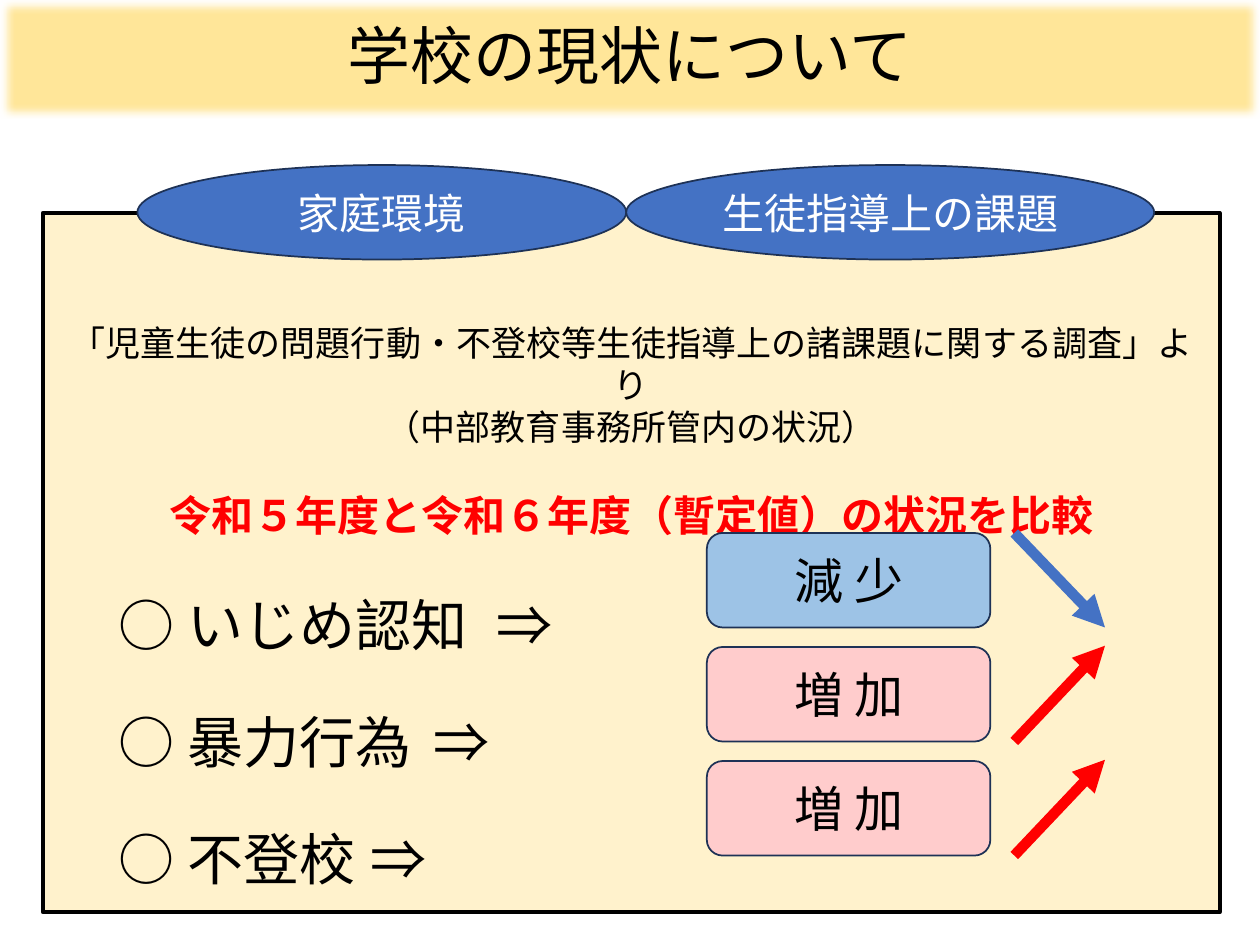
from lxml import etree
from pptx import Presentation
from pptx.dml.color import RGBColor
from pptx.enum.shapes import MSO_CONNECTOR, MSO_SHAPE
from pptx.enum.text import MSO_ANCHOR, MSO_AUTO_SIZE, PP_ALIGN
from pptx.oxml.ns import qn
from pptx.util import Inches, Pt

OVAL, ROUND = MSO_SHAPE.OVAL, MSO_SHAPE.ROUNDED_RECTANGLE
LEFT, CENTER = PP_ALIGN.LEFT, PP_ALIGN.CENTER
TOP, MIDDLE = MSO_ANCHOR.TOP, MSO_ANCHOR.MIDDLE
FONT = "Noto Sans CJK JP"
COLORS = {
    "black": "000000", "white": "FFFFFF", "red": "FF0000", "blue": "4472C4",
    "navy": "1E3256", "gold": "FFE699", "cream": "FFF2CC",
    "sky": "9DC3E6", "pink": "FFCCCC",
}

# Content
TITLE = "学校の現状について"
TOPICS = [("家庭環境", 1.09, 3.88), ("生徒指導上の課題", 4.97, 4.19)]
SOURCE = ["「児童生徒の問題行動・不登校等生徒指導上の諸課題に関する調査」より",
          "（中部教育事務所管内の状況）"]
HEAD = "令和５年度と令和６年度（暫定値）の状況を比較"
ITEMS = ["いじめ認知", "暴力行為", "不登校"]
TRENDS = [("減 少", "sky", "blue", False),
          ("増 加", "pink", "red", True),
          ("増 加", "pink", "red", True)]
TABS = [0.89, 4.1]


def rgb(name):
    return RGBColor.from_string(COLORS[name])


def add_text(para, text, size=24, color="black", bold=False, align=CENTER,
             lead=None, before=0):
    para.alignment = align
    para.space_before = Pt(before)
    if lead:
        para.line_spacing = lead
    run = para.add_run()
    run.text = text
    font = run.font
    font.size, font.bold, font.name = Pt(size), bold, FONT
    font.color.rgb = rgb(color)
    etree.SubElement(font._element, qn("a:ea"), typeface=FONT)


def paint(shape, fill, line=None, width=1):
    shape.shadow.inherit = False
    shape.fill.solid()
    shape.fill.fore_color.rgb = rgb(fill)
    if line:
        shape.line.color.rgb = rgb(line)
        shape.line.width = Pt(width)
    else:
        shape.line.fill.background()


def place(shape, x, y, w, h, anchor):
    shape.left, shape.top = Inches(x), Inches(y)
    shape.width, shape.height = Inches(w), Inches(h)
    frame = shape.text_frame
    frame.word_wrap = True
    frame.auto_size = MSO_AUTO_SIZE.NONE
    frame.vertical_anchor = anchor
    return frame


def add_box(kind, x, y, w, h, text, fill, **style):
    box = slide.shapes.add_shape(kind, 0, 0, 0, 0)
    frame = place(box, x, y, w, h, MIDDLE)
    paint(box, fill, "navy")
    add_text(frame.paragraphs[0], text, **style)


def add_arrow(x1, y1, x2, y2, color):
    arrow = slide.shapes.add_connector(
        MSO_CONNECTOR.STRAIGHT, Inches(x1), Inches(y1), Inches(x2), Inches(y2))
    arrow.line.color.rgb = rgb(color)
    arrow.line.width = Pt(6)
    props = arrow._element.spPr
    etree.SubElement(props.find(qn("a:ln")), qn("a:tailEnd"), type="triangle")
    etree.SubElement(props, qn("a:effectLst"))


deck = Presentation()
deck.slide_width, deck.slide_height = Inches(10), Inches(7.5)
slide = deck.slides.add_slide(deck.slide_layouts[1])

# Title band with soft edges
title = slide.shapes.title
frame = place(title, 0, 0, 10, 0.94, MIDDLE)
paint(title, "gold")
glow = title._element.spPr.find(qn("a:effectLst"))
etree.SubElement(glow, qn("a:softEdge"), rad="63500")
add_text(frame.paragraphs[0], TITLE, size=36, lead=0.9)

# Panel with the source, heading and list
panel = slide.placeholders[1]
frame = place(panel, 0.34, 1.69, 9.34, 5.55, TOP)
frame.margin_top = Inches(0.86)
paint(panel, "cream", "black", 2.25)
lines = [(text, dict(size=20, lead=Pt(24))) for text in SOURCE]
lines.append((HEAD, dict(color="red", bold=True, lead=Pt(29), before=24)))
lines += [(f"\t○ {item}\t⇒", dict(size=32, align=LEFT, lead=Pt(38), before=29))
          for item in ITEMS]
for i, (text, style) in enumerate(lines):
    para = frame.add_paragraph() if i else frame.paragraphs[0]
    add_text(para, text, **style)
    props = para._p.get_or_add_pPr()
    props.set("marL", "0")
    props.set("indent", "0")
    etree.SubElement(props, qn("a:buNone"))
    if text.startswith("\t"):
        stops = etree.SubElement(props, qn("a:tabLst"))
        for tab in TABS:
            etree.SubElement(stops, qn("a:tab"), pos=str(Inches(tab)), algn="l")

# Topic ovals
for text, x, w in TOPICS:
    add_box(OVAL, x, 1.31, w, 0.75, text, "blue", color="white")

# Trend boxes and arrows
for i, (text, fill, color, rise) in enumerate(TRENDS):
    top = 4.23 + i * 0.905
    low = top + 0.75
    add_box(ROUND, 5.61, top, 2.25, 0.75, text, fill, size=28)
    start, end = (low, top - 0.01) if rise else (top, low)
    add_arrow(8.05, start, 8.77, end, color)

deck.save("out.pptx")
